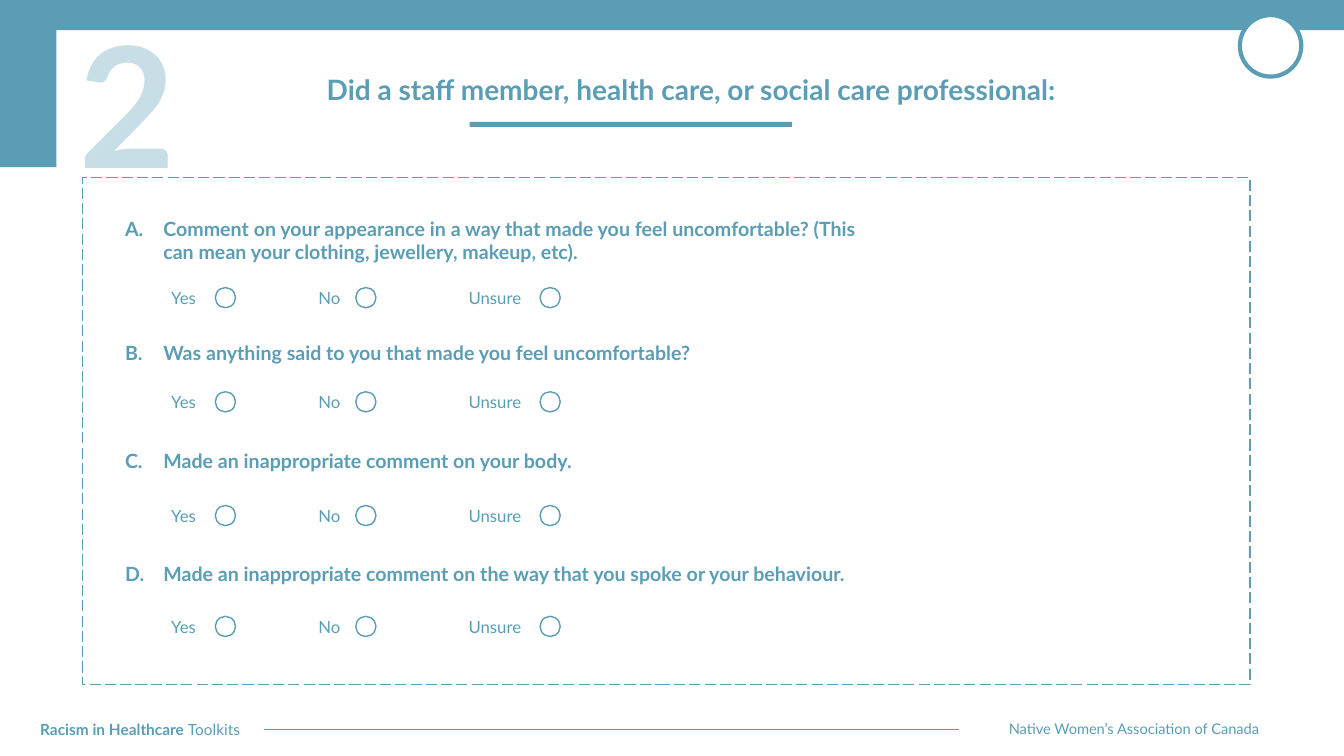
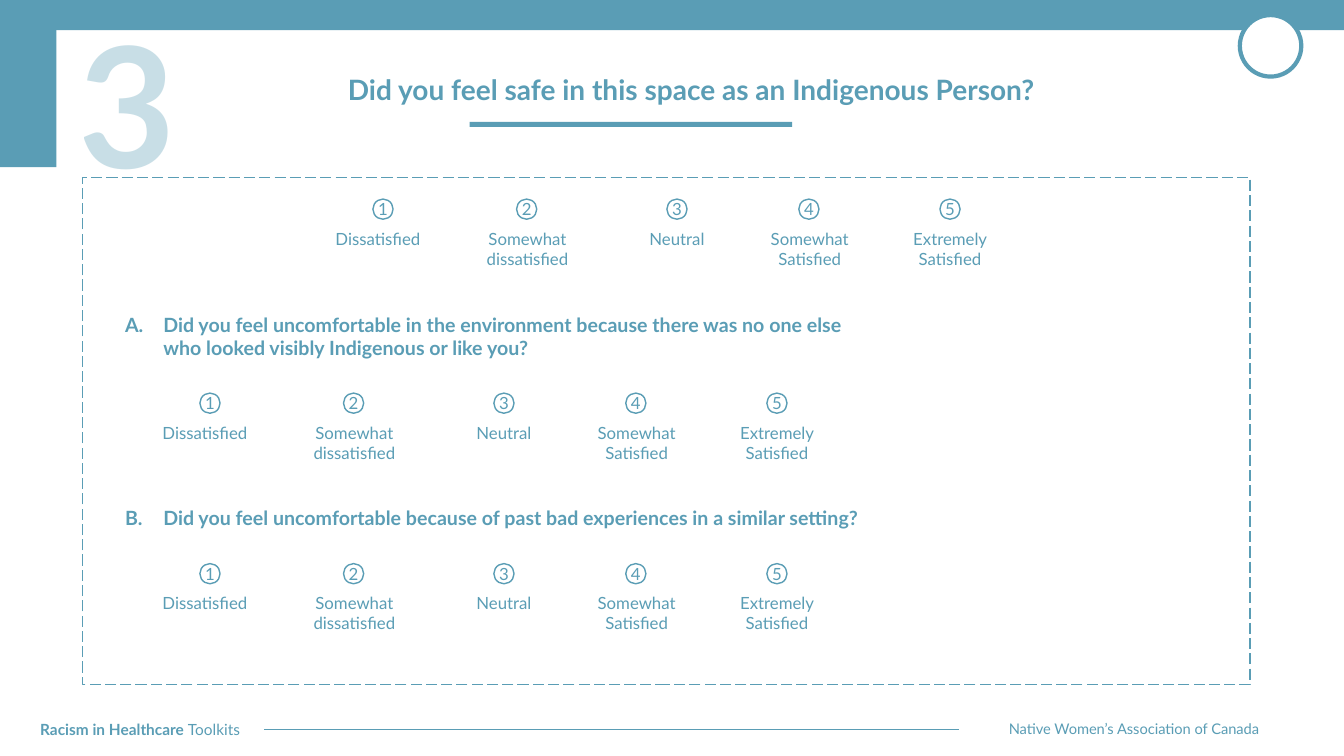
from typing import NamedTuple

from lxml.etree import SubElement
from pptx import Presentation
from pptx.dml.color import RGBColor
from pptx.enum.dml import MSO_LINE
from pptx.enum.shapes import MSO_CONNECTOR, MSO_SHAPE
from pptx.enum.text import MSO_ANCHOR as ANCHOR, PP_ALIGN as ALIGN
from pptx.oxml.ns import qn
from pptx.util import Inches, Pt

COLORS = {"teal": "5A9DB5", "white": "FFFFFF"}
FONT = "Lato"

# The slide is a grid of 80 columns and 45 rows of square cells.
COLUMNS, ROWS = 80, 45
CELL = Inches(7.5) / ROWS


class Box(NamedTuple):
    left: float
    top: float
    width: float
    height: float

    def inner(self, left, top, width, height):
        """Return a box placed relative to this one."""
        return Box(self.left + left, self.top + top, width, height)

    def lengths(self):
        return [round(value * CELL) for value in self]


PAGE = Box(0, 0, COLUMNS, ROWS)
PANEL = PAGE.inner(4.9, 10.55, 69.5, 30.2)
DOT = 1.2
QUESTION_LEFT = 1.95

# Label, left of the label, distance from the label to its circle
ANSWERS = [("Yes", 0, 3.22), ("No", 8.76, 2.82), ("Unsure", 17.7, 4.85)]

# Label, centre of the circle, centre of the label
RATINGS = [
    ("Dissatisfied", 0, -0.3),
    ("Somewhat dissatisfied", 8.55, 8.6),
    ("Neutral", 17.5, 17.5),
    ("Somewhat Satisfied", 25.35, 25.4),
    ("Extremely Satisfied", 33.75, 33.75),
]

# Question, its top, top of its answers (rows inside the panel)
TREATMENT_QUESTIONS = [
    ("Comment on your appearance in a way that made you feel uncomfortable? "
     "(This can mean your clothing, jewellery, makeup, etc).", 2.05, 6.3),
    ("Was anything said to you that made you feel uncomfortable?", 9.43, 12.5),
    ("Made an inappropriate comment on your body.", 15.9, 19.27),
    ("Made an inappropriate comment on the way that you spoke or your "
     "behaviour.", 22.63, 25.87),
]
SAFETY_QUESTIONS = [
    ("Did you feel uncomfortable in the environment because there was no one "
     "else who looked visibly Indigenous or like you?", 7.75, 12.85),
    ("Did you feel uncomfortable because of past bad experiences in a similar "
     "setting?", 19.27, 23),
]


def color(name):
    return RGBColor.from_string(COLORS[name])


def format_run(run, size, bold=False):
    run.font.name = FONT
    run.font.size = Pt(size)
    run.font.bold = bold
    run.font.color.rgb = color("teal")


def add_text(slide, box, text, size, bold=False, align=ALIGN.LEFT, anchor=ANCHOR.TOP):
    """Add a one-paragraph text box and return its paragraph."""
    text_frame = slide.shapes.add_textbox(*box.lengths()).text_frame
    text_frame.word_wrap = True
    text_frame.vertical_anchor = anchor
    paragraph = text_frame.paragraphs[0]
    paragraph.text = text
    paragraph.alignment = align
    format_run(paragraph.runs[0], size, bold)
    return paragraph


def add_shape(slide, box, kind=MSO_SHAPE.RECTANGLE, fill=None, line_width=None):
    shape = slide.shapes.add_shape(kind, *box.lengths())
    shape.shadow.inherit = False
    if fill:
        shape.fill.solid()
        shape.fill.fore_color.rgb = color(fill)
    else:
        shape.fill.background()
    if line_width:
        shape.line.color.rgb = color("teal")
        shape.line.width = Pt(line_width)
    else:
        shape.line.fill.background()
    return shape


def add_dot(slide, box, number=None):
    """Add an answer circle, with a number in it if one is given."""
    dot = add_shape(slide, box, MSO_SHAPE.OVAL, line_width=1)
    if number:
        text_frame = dot.text_frame
        text_frame.margin_left = text_frame.margin_right = 0
        text_frame.margin_top = text_frame.margin_bottom = 0
        text_frame.word_wrap = False
        text_frame.vertical_anchor = ANCHOR.MIDDLE
        text_frame.text = str(number)
        paragraph = text_frame.paragraphs[0]
        paragraph.alignment = ALIGN.CENTER
        format_run(paragraph.runs[0], 12)


def add_footer(slide, box):
    paragraph = add_text(slide, box.inner(1.8, 0, 14, 1.75),
                         "Racism in Healthcare ", 11, bold=True)
    run = paragraph.add_run()
    run.text = "Toolkits"
    format_run(run, 11)
    add_text(slide, box.inner(59.46, 0, 19, 1.75),
             "Native Women’s Association of Canada", 10.5)
    left, top, width, _ = box.inner(15.72, 0.85, 41.34, 0).lengths()
    rule = slide.shapes.add_connector(MSO_CONNECTOR.STRAIGHT, left, top, left + width, top)
    rule.line.color.rgb = color("teal")
    rule.line.width = Pt(0.5)
    SubElement(rule.line._get_or_add_ln().getparent(), qn("a:effectLst"))


def add_header(slide, box, number, title):
    add_shape(slide, box.inner(0, 0, COLUMNS, 1.8), fill="teal")
    add_shape(slide, box.inner(0, 0, 3.36, 9.95), fill="teal")
    add_shape(slide, box.inner(73.8, 0.9, 3.66, 3.66), MSO_SHAPE.OVAL, "white", 3)
    add_shape(slide, box.inner(27.95, 7.25, 19.2, 0.3), fill="teal")
    heading = add_text(slide, box.inner(9.9, 3.72, 62.5, 3.42), title, 20,
                       True, ALIGN.CENTER, ANCHOR.MIDDLE)
    numeral = add_text(slide, box.inner(4.1, 4.08, 6.84, 5.4), str(number), 120,
                       True, ALIGN.CENTER, ANCHOR.MIDDLE)
    for paragraph in (heading, numeral):
        paragraph.line_spacing = 0.9
        paragraph.space_after = Pt(6)
    numeral_color = next(numeral.runs[0]._r.iter(qn("a:srgbClr")))
    SubElement(numeral_color, qn("a:alpha"), val="32000")


def add_question(slide, box, letter_index, text):
    paragraph = add_text(slide, box, text, 14, bold=True)
    properties = paragraph._p.get_or_add_pPr()
    indent = Inches(0.38)
    properties.set("marL", str(indent))
    properties.set("indent", str(-indent))
    SubElement(properties, qn("a:buFont"), typeface="+mj-lt")
    SubElement(properties, qn("a:buAutoNum"), type="alphaUcPeriod",
               startAt=str(letter_index))


def add_answer_row(slide, box):
    for label, left, gap in ANSWERS:
        add_text(slide, box.inner(left, 0, gap, 1.8), label, 12)
        add_dot(slide, box.inner(left + gap, 0.27, DOT, DOT))


def add_rating_row(slide, box):
    """Add the five-point scale; the box starts at the centre of circle 1."""
    label_width = 7.2
    for number, (label, centre, label_centre) in enumerate(RATINGS, 1):
        add_dot(slide, box.inner(centre - DOT / 2, 0, DOT, DOT), number)
        add_text(slide, box.inner(label_centre - label_width / 2, 1.45, label_width, 3),
                 label, 12, align=ALIGN.CENTER)


def add_questions(slide, panel, questions, add_row, row_left):
    for index, (text, top, row_top) in enumerate(questions, 1):
        add_question(slide, panel.inner(QUESTION_LEFT, top, 45.8, 3.4), index, text)
        add_row(slide, panel.inner(row_left, row_top, 40, 4.5))


def add_survey_slide(presentation, number, title):
    """Add a slide with the shared header, footer and dashed panel."""
    slide = presentation.slides.add_slide(presentation.slide_layouts[6])
    add_header(slide, PAGE, number, title)
    add_footer(slide, PAGE.inner(0, 42.54, COLUMNS, 2.46))
    panel = add_shape(slide, PANEL, line_width=1)
    panel.line.dash_style = MSO_LINE.LONG_DASH
    return slide


def add_treatment_slide(presentation):
    slide = add_survey_slide(
        presentation, 2, "Did a staff member, health care, or social care professional:")
    add_questions(slide, PANEL, TREATMENT_QUESTIONS, add_answer_row, 4.7)


def add_safety_slide(presentation):
    slide = add_survey_slide(
        presentation, 3, "Did you feel safe in this space as an Indigenous Person?")
    add_rating_row(slide, PANEL.inner(17.9, 1.3, 40, 4.5))
    add_questions(slide, PANEL, SAFETY_QUESTIONS, add_rating_row, 7.6)


def main():
    presentation = Presentation()
    presentation.slide_width = round(COLUMNS * CELL)
    presentation.slide_height = round(ROWS * CELL)
    add_treatment_slide(presentation)
    add_safety_slide(presentation)
    presentation.save("out.pptx")


if __name__ == "__main__":
    main()
